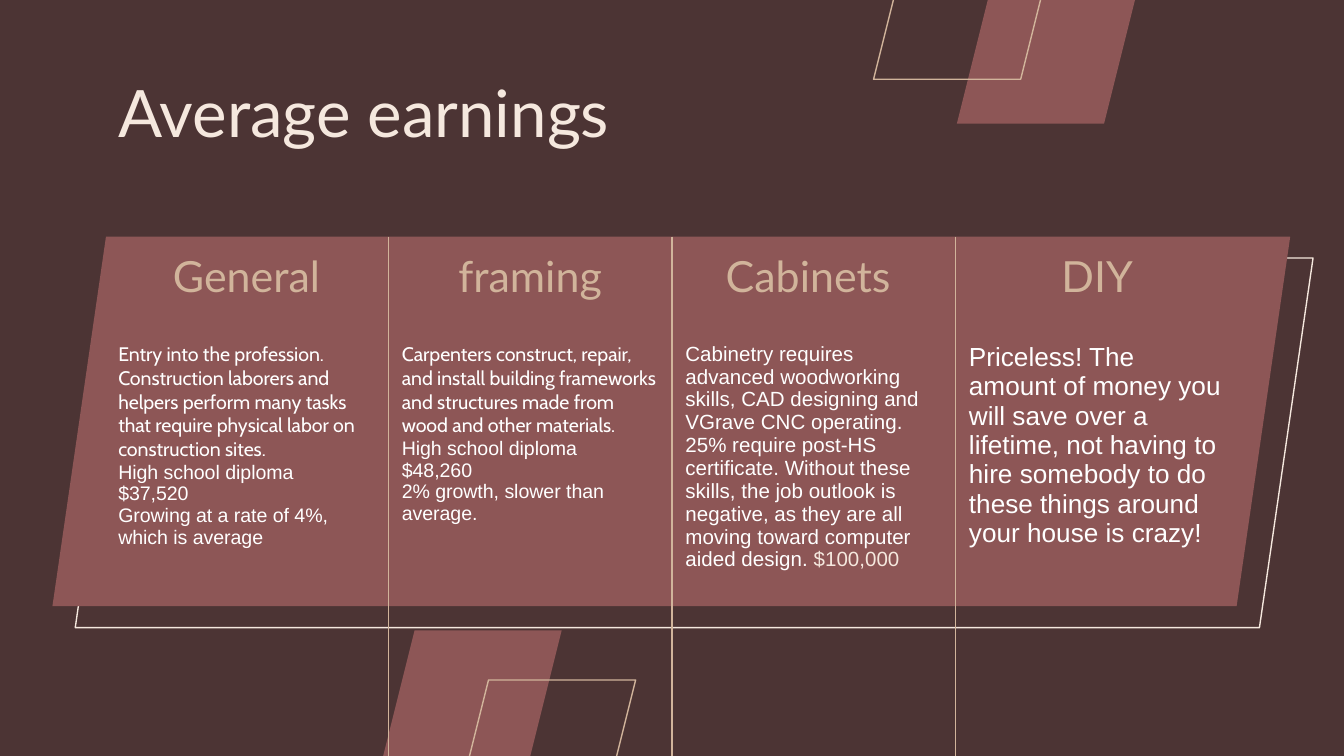
from pptx import Presentation
from pptx.dml.color import RGBColor
from pptx.enum.shapes import MSO_SHAPE
from pptx.enum.text import MSO_ANCHOR, PP_ALIGN
from pptx.oxml import parse_xml
from pptx.oxml.ns import nsdecls
from pptx.util import Inches, Pt

PARALLELOGRAM = MSO_SHAPE.PARALLELOGRAM
TOP = MSO_ANCHOR.TOP
LEFT, CENTER = PP_ALIGN.LEFT, PP_ALIGN.CENTER

THEME = {
    "background": "4C3434", "panel": "8D5656", "tan": "D1B49B",
    "cream": "F5E8DE", "white": "FFFFFF",
    "heading_font": "Lato", "lead_font": "Cabin", "body_font": "Arial",
    "title": 35, "heading": 23, "small": 10.5, "medium": 11, "large": 14,
    "line": 0.75,
}

TITLE = "Average earnings"

# Each column: heading, then paragraphs made of (text, font, size, colour) runs
LEAD = ("lead_font", "small", "white")
FACT = ("body_font", "small", "white")
COLUMNS = [
    ("General", [
        [("Entry into the profession. Construction laborers and helpers perform "
          "many tasks that require physical labor on construction sites.", *LEAD)],
        [("High school diploma", *FACT)],
        [("$37,520", *FACT)],
        [("Growing at a rate of 4%, which is average", *FACT)],
    ]),
    ("framing", [
        [("Carpenters construct, repair, and install building frameworks and "
          "structures made from wood and other materials.", *LEAD)],
        [("High school diploma", *FACT)],
        [("$48,260", *FACT)],
        [("2% growth, slower than average.", *FACT)],
    ]),
    ("Cabinets ", [
        [("Cabinetry requires advanced woodworking skills, CAD designing and "
          "VGrave CNC operating. 25% require post-HS certificate. Without these "
          "skills, the job outlook is negative, as they are all moving toward "
          "computer aided design. ", "body_font", "medium", "white"),
         ("$100,000", "body_font", "medium", "cream")],
    ]),
    ("DIY", [
        [("Priceless! The amount of money you will save over a lifetime, not "
          "having to hire somebody to do these things around your house is "
          "crazy!", "body_font", "large", "white")],
    ]),
]

# Slanted shapes: left, top, width, height, slant, fill, line
SMALL = (1.33, 0.94, 0.25)
LARGE = (9.21, 2.75, 0.145)
SLANTS = [
    (7.12, -0.02, *SMALL, "panel", None),
    (2.85, 4.69, *SMALL, "panel", None),
    (3.4, 5.06, *SMALL, None, "tan"),
    (6.5, -0.35, *SMALL, None, "tan"),
    (0.56, 1.92, *LARGE, None, "cream"),
    (0.39, 1.76, *LARGE, "panel", None),
]

TABLE_LEFT, TABLE_TOP = 0.78, 1.76
COL_W, ROW_H, ROWS = 2.11, 0.69, 4
INSET = Inches(0.1)


def color(name):
    return RGBColor.from_string(THEME[name])


def style_run(r, font, size, tint):
    r.font.name = THEME[font]
    r.font.size = Pt(THEME[size])
    r.font.color.rgb = color(tint)


def set_insets(box):
    box.margin_left = box.margin_right = INSET
    box.margin_top = box.margin_bottom = INSET
    box.vertical_anchor = TOP


def add_slant(slide, left, top, width, height, slant, fill, line):
    sp = slide.shapes.add_shape(PARALLELOGRAM, Inches(left), Inches(top),
                                Inches(width), Inches(height))
    sp.adjustments[0] = slant
    sp.shadow.inherit = False
    if fill:
        sp.fill.solid()
        sp.fill.fore_color.rgb = color(fill)
    else:
        sp.fill.background()
    if line:
        sp.line.color.rgb = color(line)
        sp.line.width = Pt(THEME["line"])
    else:
        sp.line.fill.background()


def set_borders(cell, visible):
    """Draw the sides in visible and clear the others."""
    tc_pr = cell._tc.get_or_add_tcPr()
    for i, side in enumerate("LRTB"):
        paint = (f'<a:solidFill><a:srgbClr val="{THEME["tan"]}"/></a:solidFill>'
                 if side in visible else "<a:noFill/>")
        tc_pr.insert(i, parse_xml(
            f'<a:ln{side} {nsdecls("a")} w="{Pt(THEME["line"])}">{paint}</a:ln{side}>'))


def fill_cell(cell, paragraphs, align):
    tf = cell.text_frame
    for i, runs in enumerate(paragraphs):
        p = tf.paragraphs[0] if i == 0 else tf.add_paragraph()
        p.alignment = align
        for text, *style in runs:
            r = p.add_run()
            r.text = text
            style_run(r, *style)


def add_title(slide):
    sp = slide.shapes.title
    sp.left, sp.top = Inches(0.78), Inches(0.44)
    sp.width, sp.height = Inches(8.44), Inches(0.7)
    tf = sp.text_frame
    tf.text = TITLE
    set_insets(tf)
    p = tf.paragraphs[0]
    p.alignment = LEFT
    style_run(p.runs[0], "heading_font", "title", "cream")


def add_earnings_table(slide):
    n = len(COLUMNS)
    table = slide.shapes.add_table(
        ROWS, n, Inches(TABLE_LEFT), Inches(TABLE_TOP),
        Inches(COL_W * n), Inches(ROW_H * ROWS)).table
    table.first_row = table.horz_banding = False
    for row in table.rows:
        row.height = Inches(ROW_H)
    for c, (heading, paragraphs) in enumerate(COLUMNS):
        table.columns[c].width = Inches(COL_W)
        sides = ("L" if c > 0 else "") + ("R" if c < n - 1 else "")
        for r in range(ROWS):
            cell = table.cell(r, c)
            set_insets(cell)
            cell.fill.background()
            set_borders(cell, sides)
        fill_cell(table.cell(0, c),
                  [[(heading, "heading_font", "heading", "tan")]], CENTER)
        fill_cell(table.cell(1, c), paragraphs, LEFT)


def main():
    prs = Presentation()
    prs.slide_width = Inches(10)
    prs.slide_height = prs.slide_width * 9 // 16
    slide = prs.slides.add_slide(prs.slide_layouts[5])
    slide.background.fill.solid()
    slide.background.fill.fore_color.rgb = color("background")
    for slant in SLANTS:
        add_slant(slide, *slant)
    add_title(slide)
    add_earnings_table(slide)
    prs.save("out.pptx")


if __name__ == "__main__":
    main()
